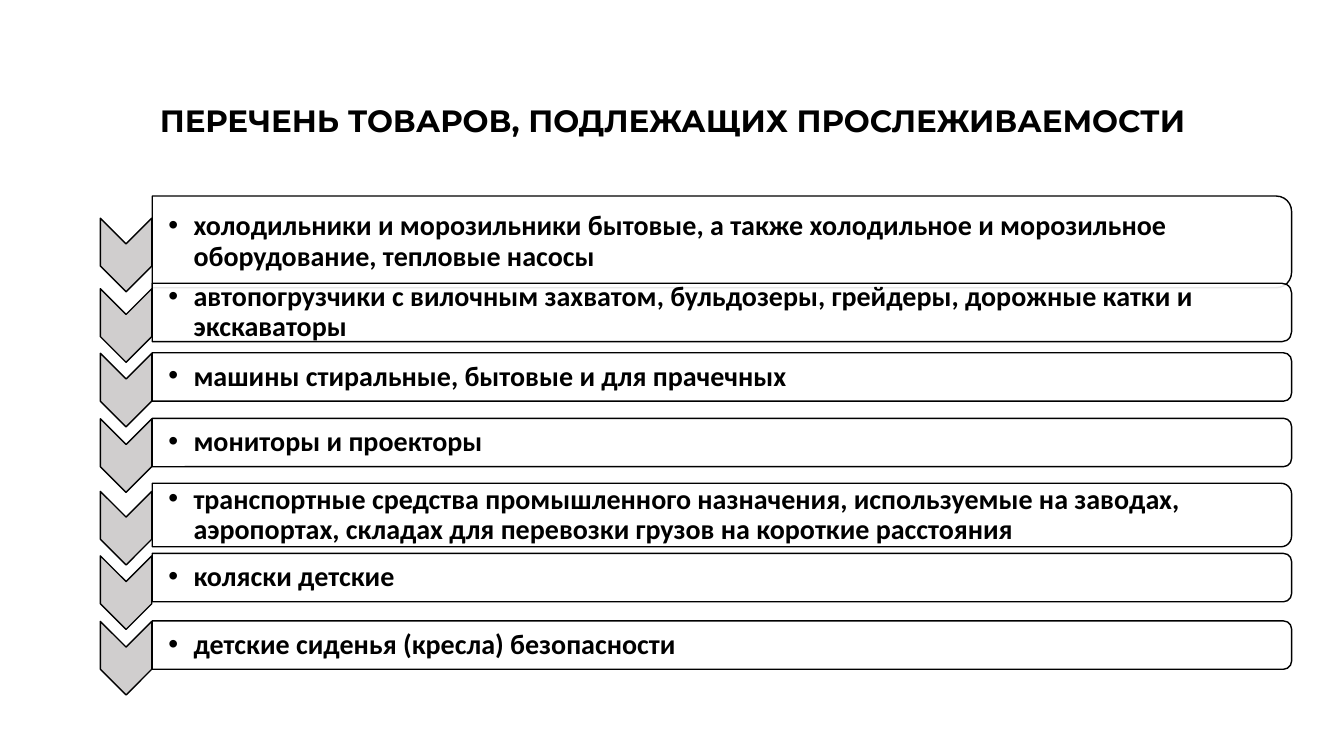
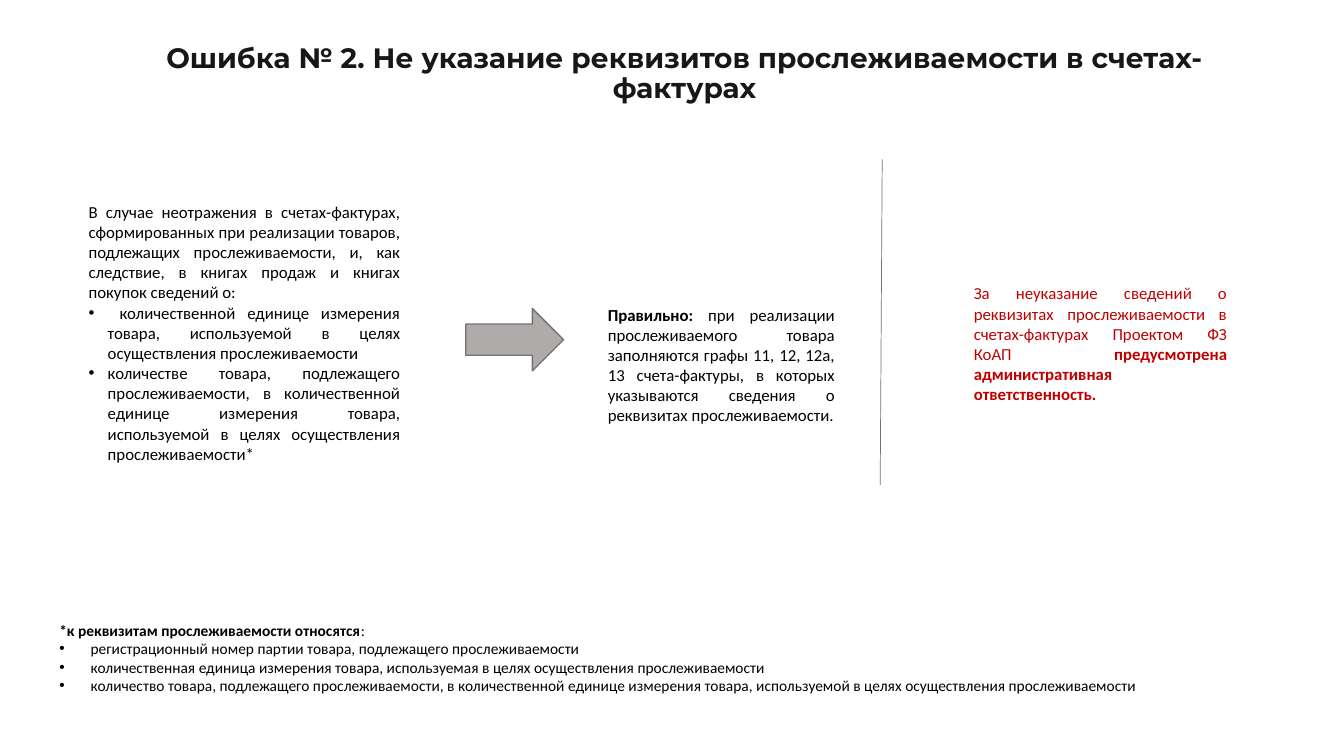
from lxml.etree import SubElement
from pptx import Presentation
from pptx.dml.color import RGBColor
from pptx.enum.shapes import MSO_CONNECTOR, MSO_SHAPE
from pptx.enum.text import MSO_ANCHOR, MSO_AUTO_SIZE, PP_ALIGN
from pptx.oxml.ns import qn
from pptx.util import Inches, Pt

BLACK = RGBColor(0x00, 0x00, 0x00)
INK = RGBColor(0x18, 0x17, 0x17)
WHITE = RGBColor(0xFF, 0xFF, 0xFF)
SILVER = RGBColor(0xD0, 0xCE, 0xCE)
GRAY = RGBColor(0xAF, 0xAB, 0xAB)
SLATE = RGBColor(0x76, 0x71, 0x71)
RED = RGBColor(0xC0, 0x00, 0x00)

TITLE_FONT, BODY_FONT = "Montserrat", "Calibri"
TITLE_WIDTH = 11.5

GOODS_TITLE = "ПЕРЕЧЕНЬ ТОВАРОВ, ПОДЛЕЖАЩИХ ПРОСЛЕЖИВАЕМОСТИ"
GOODS = [
    ("холодильники и морозильники бытовые, а также холодильное и морозильное "
     "оборудование, тепловые насосы", 2.40, 0.91, 2.53),
    ("автопогрузчики с вилочным захватом, бульдозеры, грейдеры, дорожные катки "
     "и экскаваторы", 3.10, 0.58, 3.23),
    ("машины стиральные, бытовые и для прачечных", 3.74, 0.48, 3.87),
    ("мониторы и проекторы", 4.39, 0.48, 4.52),
    ("транспортные средства промышленного назначения, используемые на заводах, "
     "аэропортах, складах для перевозки грузов на короткие расстояния",
     5.11, 0.63, 5.24),
    ("коляски детские", 5.73, 0.48, 5.88),
    ("детские сиденья (кресла) безопасности", 6.40, 0.48, 6.53),
]
CARD_LEFT, CARD_WIDTH = 1.51, 11.3
CHEVRON_CENTER, CHEVRON_LENGTH, CHEVRON_WIDTH = 1.25, 0.73, 0.51

ERROR_TITLE = "Ошибка № 2. Не указание реквизитов прослеживаемости в счетах-фактурах"
ERROR_BLOCKS = [
    dict(at=(0.78, 1.95, 3.29, 2.73), size=12, indent=0.19, color=BLACK,
         align=PP_ALIGN.JUSTIFY, paras=[
             (False, [("В случае неотражения в счетах-фактурах, сформированных при "
                       "реализации товаров, подлежащих прослеживаемости, и, как "
                       "следствие, в книгах продаж и книгах покупок сведений о:", False)]),
             (True, [(" количественной единице измерения товара, используемой в целях "
                      "осуществления прослеживаемости", False)]),
             (True, [("количестве товара, подлежащего прослеживаемости, в "
                      "количественной единице измерения товара, используемой в целях "
                      "осуществления прослеживаемости*", False)]),
         ]),
    dict(at=(5.93, 2.97, 2.45, 1.31), size=12, indent=0, color=BLACK,
         align=PP_ALIGN.JUSTIFY, paras=[
             (False, [("Правильно:", True),
                      (" при реализации прослеживаемого товара заполняются графы 11, "
                       "12, 12а, 13 счета-фактуры, в которых указываются сведения о "
                       "реквизитах прослеживаемости.", False)]),
         ]),
    dict(at=(9.56, 2.76, 2.71, 1.31), size=12, indent=0, color=RED,
         align=PP_ALIGN.JUSTIFY, paras=[
             (False, [("За неуказание сведений о реквизитах прослеживаемости в "
                       "счетах-фактурах Проектом ФЗ КоАП ", False),
                      ("предусмотрена административная ответственность.", True)]),
         ]),
    dict(at=(0.49, 6.11, 11.49, 0.84), size=11, indent=0.31, color=BLACK,
         align=PP_ALIGN.LEFT, paras=[
             (False, [("*к реквизитам прослеживаемости относятся", True), (":", False)]),
             (True, [("регистрационный номер партии товара, подлежащего "
                      "прослеживаемости", False)]),
             (True, [("количественная единица измерения товара, используемая в целях "
                      "осуществления прослеживаемости", False)]),
             (True, [("количество товара, подлежащего прослеживаемости, в "
                      "количественной единице измерения товара, используемой в целях "
                      "осуществления прослеживаемости", False)]),
         ]),
]


def add_span(para, text, font, size, color, bold):
    span = para.add_run()
    span.text = text
    span.font.name = font
    span.font.size = Pt(size)
    span.font.color.rgb = color
    span.font.bold = bold


def add_page(deck, title, left, top, height, size, color):
    page = deck.slides.add_slide(deck.slide_layouts[5])
    box = page.shapes.title
    box.left, box.top = Inches(left), Inches(top)
    box.width, box.height = Inches(TITLE_WIDTH), Inches(height)
    frame = box.text_frame
    frame.auto_size = MSO_AUTO_SIZE.NONE
    frame.vertical_anchor = MSO_ANCHOR.MIDDLE
    para = frame.paragraphs[0]
    para.alignment = PP_ALIGN.CENTER
    para.line_spacing = 0.9
    add_span(para, title, TITLE_FONT, size, color, True)
    return page


def add_figure(page, kind, at, fill, line, rotation=0):
    figure = page.shapes.add_shape(kind, *map(Inches, at))
    figure.shadow.inherit = False
    figure.rotation = rotation
    figure.fill.solid()
    figure.fill.fore_color.rgb = fill
    figure.line.color.rgb = line
    figure.line.width = Pt(1)
    return figure


def add_turned(page, kind, center_x, center_y, length, breadth, fill):
    at = (center_x - length / 2, center_y - breadth / 2, length, breadth)
    return add_figure(page, kind, at, fill, BLACK, 90)


def set_opacity(figure, percent):
    color = figure.fill._xPr.find(qn("a:solidFill"))[0]
    SubElement(color, qn("a:alpha"), val=str(percent * 1000))


def add_bullet(para, indent):
    props = para._p.get_or_add_pPr()
    props.set("marL", str(Inches(indent)))
    props.set("indent", str(-Inches(indent)))
    SubElement(props, qn("a:buFont"), typeface="Arial")
    SubElement(props, qn("a:buChar"), char="•")


def add_text(page, at, paras, size, color, align, indent):
    box = page.shapes.add_textbox(*map(Inches, at))
    frame = box.text_frame
    frame.word_wrap = True
    for index, (bulleted, spans) in enumerate(paras):
        para = frame.add_paragraph() if index else frame.paragraphs[0]
        para.alignment = align
        if bulleted:
            add_bullet(para, indent)
        for text, bold in spans:
            add_span(para, text, BODY_FONT, size, color, bold)
    return frame


def add_goods(page):
    for text, center, height, chevron_center in GOODS:
        add_turned(page, MSO_SHAPE.CHEVRON, CHEVRON_CENTER, chevron_center,
                   CHEVRON_LENGTH, CHEVRON_WIDTH, SILVER)
        card = add_turned(page, MSO_SHAPE.ROUND_2_SAME_RECTANGLE,
                          CARD_LEFT + CARD_WIDTH / 2, center, height, CARD_WIDTH, WHITE)
        set_opacity(card, 90)
        inner = height * 0.9
        frame = add_text(page, (CARD_LEFT, center - inner / 2, CARD_WIDTH - 0.03, inner),
                         [(True, [(text, True)])], 20, BLACK, PP_ALIGN.LEFT, 0.25)
        frame.vertical_anchor = MSO_ANCHOR.MIDDLE
        frame.margin_left = Inches(0.16)
        frame.margin_top = frame.margin_right = frame.margin_bottom = Inches(0.01)
        frame.paragraphs[0].line_spacing = 0.9


def add_error(page):
    for block in ERROR_BLOCKS:
        frame = add_text(page, **block)
        frame.auto_size = MSO_AUTO_SIZE.SHAPE_TO_FIT_TEXT
    add_figure(page, MSO_SHAPE.RIGHT_ARROW, (4.62, 3.06, 0.97, 0.62), GRAY, SLATE)
    divider = page.shapes.add_connector(
        MSO_CONNECTOR.STRAIGHT, *map(Inches, (8.75, 1.58, 8.73, 4.81)))
    divider.line.color.rgb = SLATE
    divider.line.width = Pt(0.5)
    SubElement(divider._element.spPr, qn("a:effectLst"))


def main():
    deck = Presentation()
    deck.slide_width, deck.slide_height = Inches(13.33), Inches(7.5)
    add_goods(add_page(deck, GOODS_TITLE, 0.92, 0.72, 1, 22, BLACK))
    add_error(add_page(deck, ERROR_TITLE, 1.04, 0.01, 1.45, 20, INK))
    deck.save("out.pptx")


if __name__ == "__main__":
    main()
